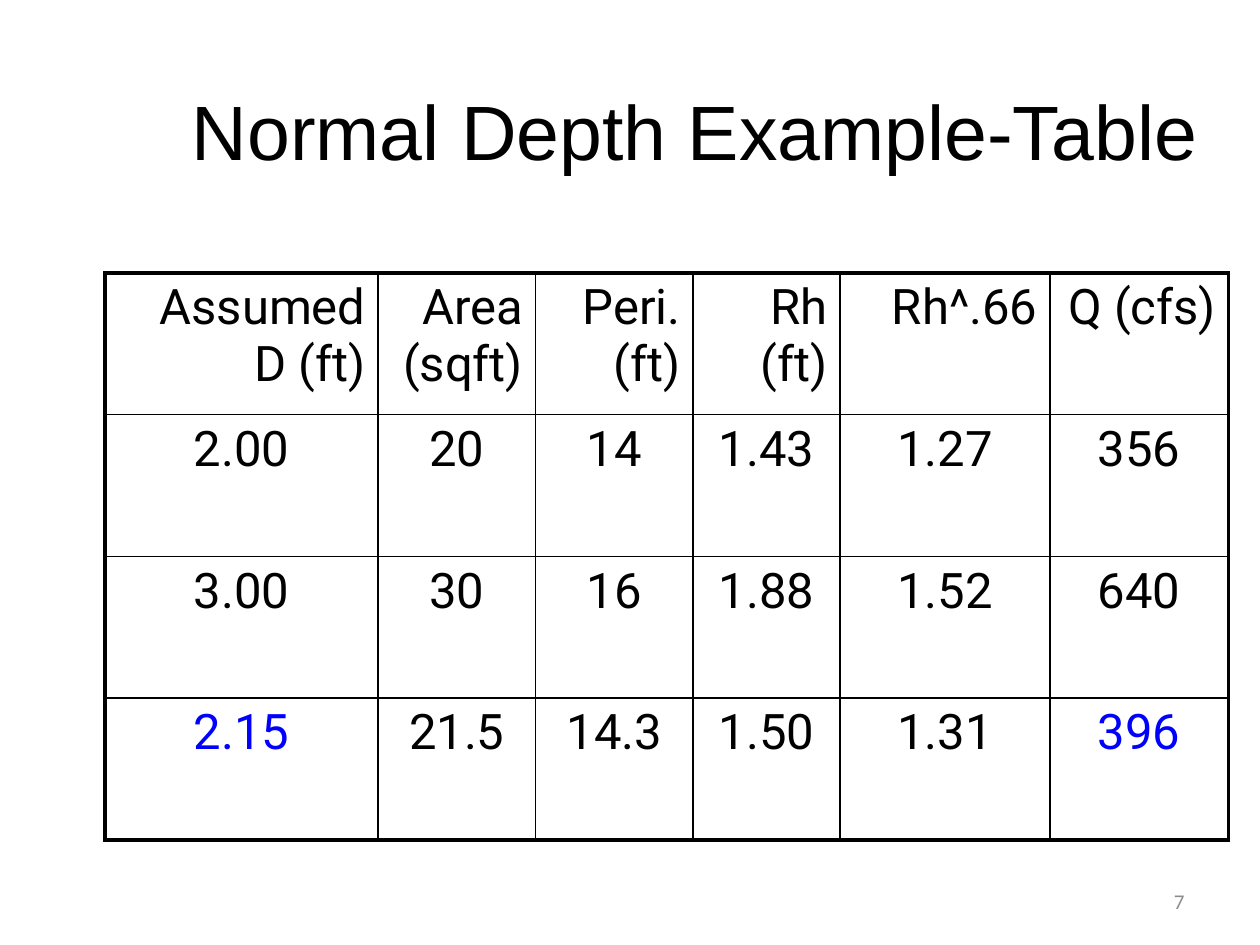
import pptx
import pptx.dml.color
import pptx.enum.text
import pptx.util
from lxml import etree

COLORS = {"ink": "000000", "answer": "0000FF", "muted": "8C8C8C"}
ALIGN = pptx.enum.text.PP_ALIGN
ANCHOR = pptx.enum.text.MSO_ANCHOR
COL_UNITS = [26, 15, 15, 14, 20, 17]
ROW_UNITS = 13.5
DEPTHS = [
    ["Assumed D (ft)", "Area (sqft)", "Peri. (ft)", "Rh (ft)", "Rh^.66", "Q (cfs)"],
    ["2.00", "20", "14", "1.43", "1.27", "356"],
    ["3.00", "30", "16", "1.88", "1.52", "640"],
    ["2.15", "21.5", "14.3", "1.50", "1.31", "396"],
]
ANSWERS = {"2.15", "396"}


class Deck:
    """Slide builder on a grid of 120 columns by 90 rows."""

    def __init__(self):
        self.prs = pptx.Presentation()
        self.prs.slide_width = pptx.util.Inches(10)
        self.prs.slide_height = pptx.util.Inches(7.5)
        self.s = self.prs.slides.add_slide(self.prs.slide_layouts[6])

    def x(self, cols):
        return round(self.prs.slide_width * cols / 120)

    def y(self, rows):
        return round(self.prs.slide_height * rows / 90)

    def add_text(self, tf, text, size, font, color, align):
        p = tf.paragraphs[0]
        p.alignment = align
        r = p.add_run()
        r.text = text
        r.font.size = pptx.util.Pt(size)
        r.font.name = font
        r.font.color.rgb = pptx.dml.color.RGBColor.from_string(COLORS[color])

    def label(self, left, top, width, height, text, size, font, color, align):
        sp = self.s.shapes.add_textbox(self.x(left), self.y(top), self.x(width), self.y(height))
        tf = sp.text_frame
        tf.word_wrap = True
        tf.vertical_anchor = ANCHOR.MIDDLE
        self.add_text(tf, text, size, font, color, align)

    def border(self, cell, side, points):
        tc_pr = cell._tc.get_or_add_tcPr()
        ns = "{%s}" % tc_pr.nsmap["a"]
        ln = etree.SubElement(tc_pr, ns + "ln" + side, w=str(pptx.util.Pt(points)))
        fill = etree.SubElement(ln, ns + "solidFill")
        etree.SubElement(fill, ns + "srgbClr", val=COLORS["ink"])

    def table(self, left, top, col_units, row_units, data, size, font):
        n_rows, n_cols = len(data), len(col_units)
        frame = self.s.shapes.add_table(
            n_rows, n_cols, self.x(left), self.y(top),
            self.x(sum(col_units)), self.y(row_units * n_rows))
        tbl = frame.table
        tbl.first_row = tbl.horz_banding = False
        for col, units in zip(tbl.columns, col_units):
            col.width = self.x(units)
        for i, values in enumerate(data):
            tbl.rows[i].height = self.y(row_units)
            for j, value in enumerate(values):
                cell = tbl.cell(i, j)
                outer = {"L": j == 0, "R": j == n_cols - 1, "T": i == 0, "B": i == n_rows - 1}
                for side, is_outer in outer.items():
                    self.border(cell, side, 2.25 if is_outer else 1)
                cell.fill.background()
                self.add_text(cell.text_frame, value, size, font,
                              "answer" if value in ANSWERS else "ink",
                              ALIGN.CENTER if i else ALIGN.RIGHT)


def main():
    deck = Deck()
    deck.label(15.1, 2.8, 102.2, 19.2, "Normal Depth Example-Table", 44, "Arial", "ink", ALIGN.CENTER)
    deck.table(10, 26, COL_UNITS, ROW_UNITS, DEPTHS, 28, "Roboto")
    deck.label(86, 83.4, 28, 4.8, "7", 12, "Calibri", "muted", ALIGN.RIGHT)
    deck.prs.save("out.pptx")


if __name__ == "__main__":
    main()
